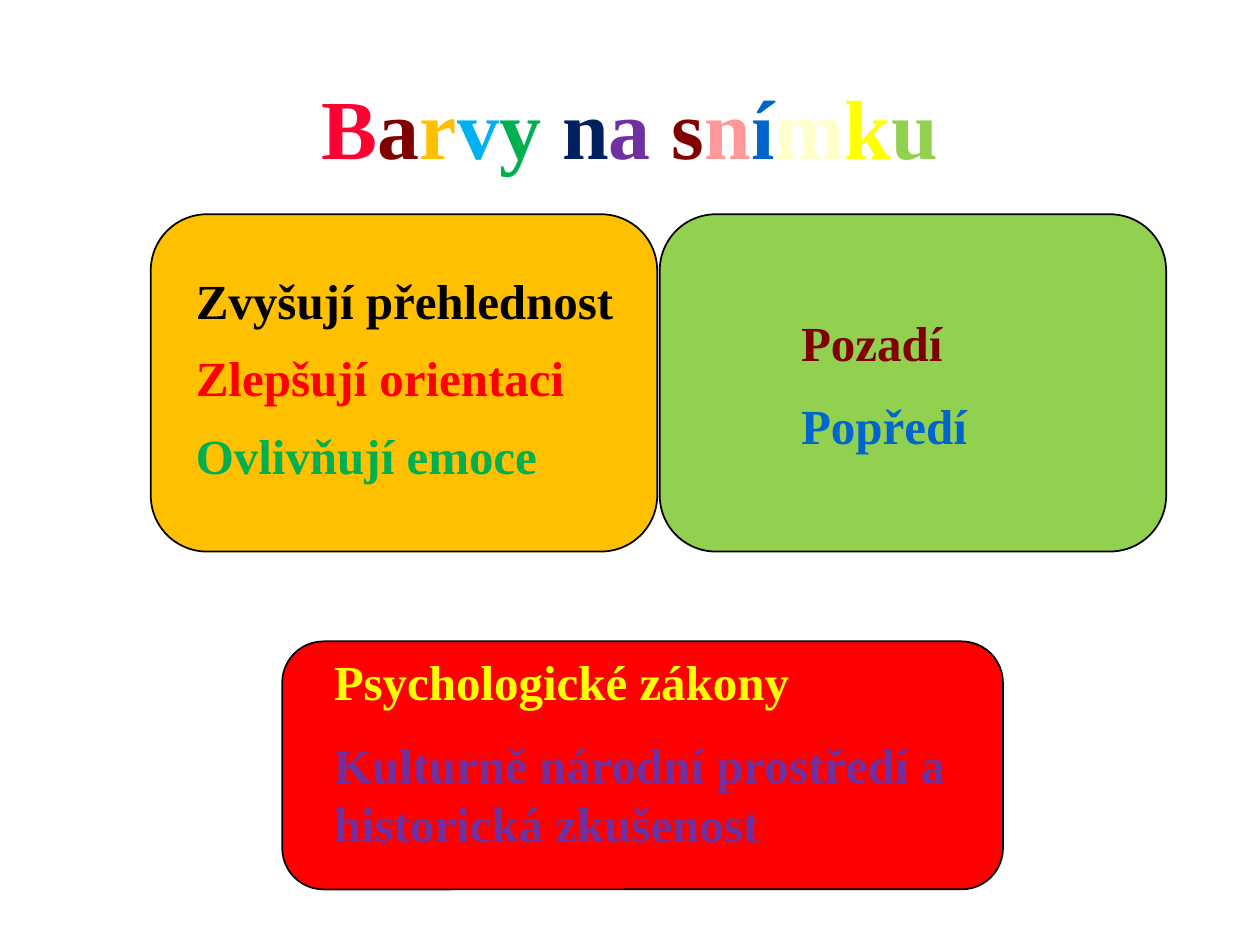
from lxml.etree import SubElement
from pptx import Presentation
from pptx.dml.color import RGBColor
from pptx.enum.shapes import MSO_SHAPE
from pptx.enum.text import MSO_ANCHOR, PP_ALIGN
from pptx.oxml.ns import qn
from pptx.util import Cm, Pt

FONT = "Times New Roman"
BLACK = RGBColor(0x00, 0x00, 0x00)
RED = RGBColor(0xFF, 0x00, 0x00)
CRIMSON = RGBColor(0xFF, 0x00, 0x33)
MAROON = RGBColor(0x80, 0x00, 0x00)
ORANGE = RGBColor(0xFF, 0xC0, 0x00)
SKY = RGBColor(0x00, 0xB0, 0xF0)
GREEN = RGBColor(0x00, 0xB0, 0x50)
NAVY = RGBColor(0x00, 0x20, 0x60)
PURPLE = RGBColor(0x70, 0x30, 0xA0)
PINK = RGBColor(0xFF, 0x99, 0x99)
BLUE = RGBColor(0x00, 0x66, 0xCC)
CREAM = RGBColor(0xFF, 0xFF, 0xCC)
YELLOW = RGBColor(0xFF, 0xFF, 0x00)
LIME = RGBColor(0x92, 0xD0, 0x50)

TITLE = [
    ("B", CRIMSON), ("a", MAROON), ("r", ORANGE), ("v", SKY), ("y ", GREEN),
    ("n", NAVY), ("a ", PURPLE), ("s", MAROON), ("n", PINK), ("í", BLUE),
    ("m", CREAM), ("k", YELLOW), ("u", LIME),
]
TITLE_BOX = (1.9, 1.7, 21.6, 1.68)

CARDS = [
    {"fill": RED, "card": (5.69, 12.93, 14.53, 5), "text": (6.48, 13, 13.54, 4.45),
     "spacing": 1.0,
     "lines": [("Psychologické zákony", YELLOW),
               ("Kulturně národní prostředí a historická zkušenost", PURPLE)]},
    {"fill": LIME, "card": (13.3, 4.32, 10.21, 6.8), "text": (15.9, 6.17, 5.38, 3.23),
     "spacing": 1.0,
     "lines": [("Pozadí", MAROON), ("Popředí", BLUE)]},
    {"fill": ORANGE, "card": (3.04, 4.32, 10.21, 6.8), "text": (3.7, 5.46, 9.6, 4.88),
     "spacing": 0.9,
     "lines": [("Zvyšují přehlednost", BLACK), ("Zlepšují orientaci", RED),
               ("Ovlivňují emoce", GREEN)]},
]


def place(box):
    return [Cm(v) for v in box]


def add_run(p, text, size, color):
    r = p.add_run()
    r.text = text
    r.font.name = FONT
    r.font.size = Pt(size)
    r.font.bold = True
    r.font.color.rgb = color


def add_text_frame(s, box):
    tf = s.shapes.add_textbox(*place(box)).text_frame
    tf.word_wrap = True
    return tf


def add_card(s, box, fill):
    sp = s.shapes.add_shape(MSO_SHAPE.ROUNDED_RECTANGLE, *place(box))
    sp.shadow.inherit = False
    sp.fill.solid()
    sp.fill.fore_color.rgb = fill
    sp.line.color.rgb = BLACK
    sp.line.width = Pt(1)


def set_half_line_before(p):
    p.space_before = Pt(0)
    before = p._p.pPr.find(qn("a:spcBef"))
    before.clear()
    SubElement(before, qn("a:spcPct"), val="50000")


def add_lines(s, box, lines, spacing):
    tf = add_text_frame(s, box)
    for i, (text, color) in enumerate(lines):
        p = tf.add_paragraph() if i else tf.paragraphs[0]
        p.line_spacing = spacing
        set_half_line_before(p)
        add_run(p, text, 28, color)


def main():
    prs = Presentation()
    prs.slide_width, prs.slide_height = Cm(25.4), Cm(19.05)
    s = prs.slides.add_slide(prs.slide_layouts[6])

    for card in CARDS:
        add_card(s, card["card"], card["fill"])

    tf = add_text_frame(s, TITLE_BOX)
    tf.vertical_anchor = MSO_ANCHOR.MIDDLE
    p = tf.paragraphs[0]
    p.alignment = PP_ALIGN.CENTER
    for text, color in TITLE:
        add_run(p, text, 48, color)

    for card in reversed(CARDS):
        add_lines(s, card["text"], card["lines"], card["spacing"])

    prs.save("out.pptx")


if __name__ == "__main__":
    main()
